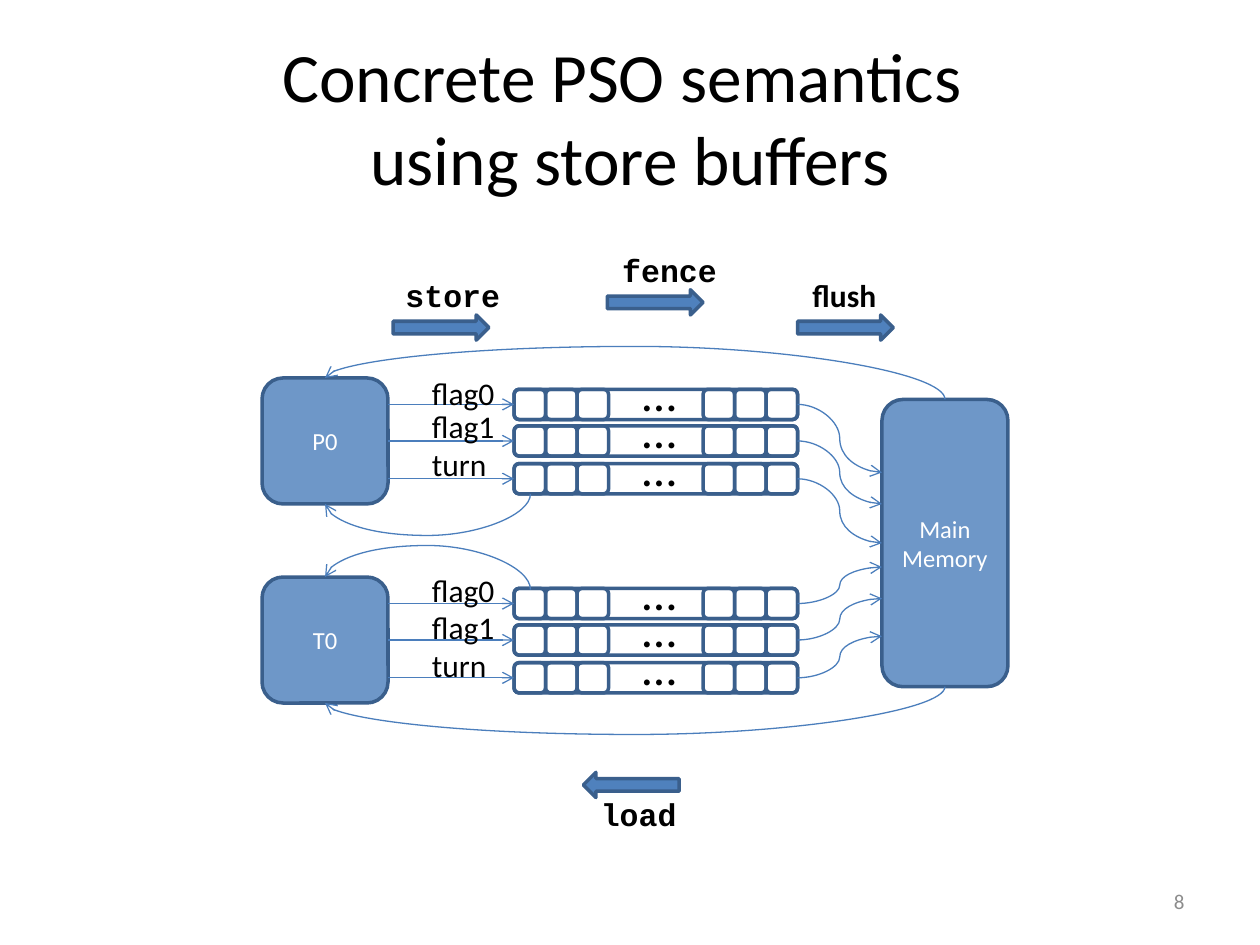
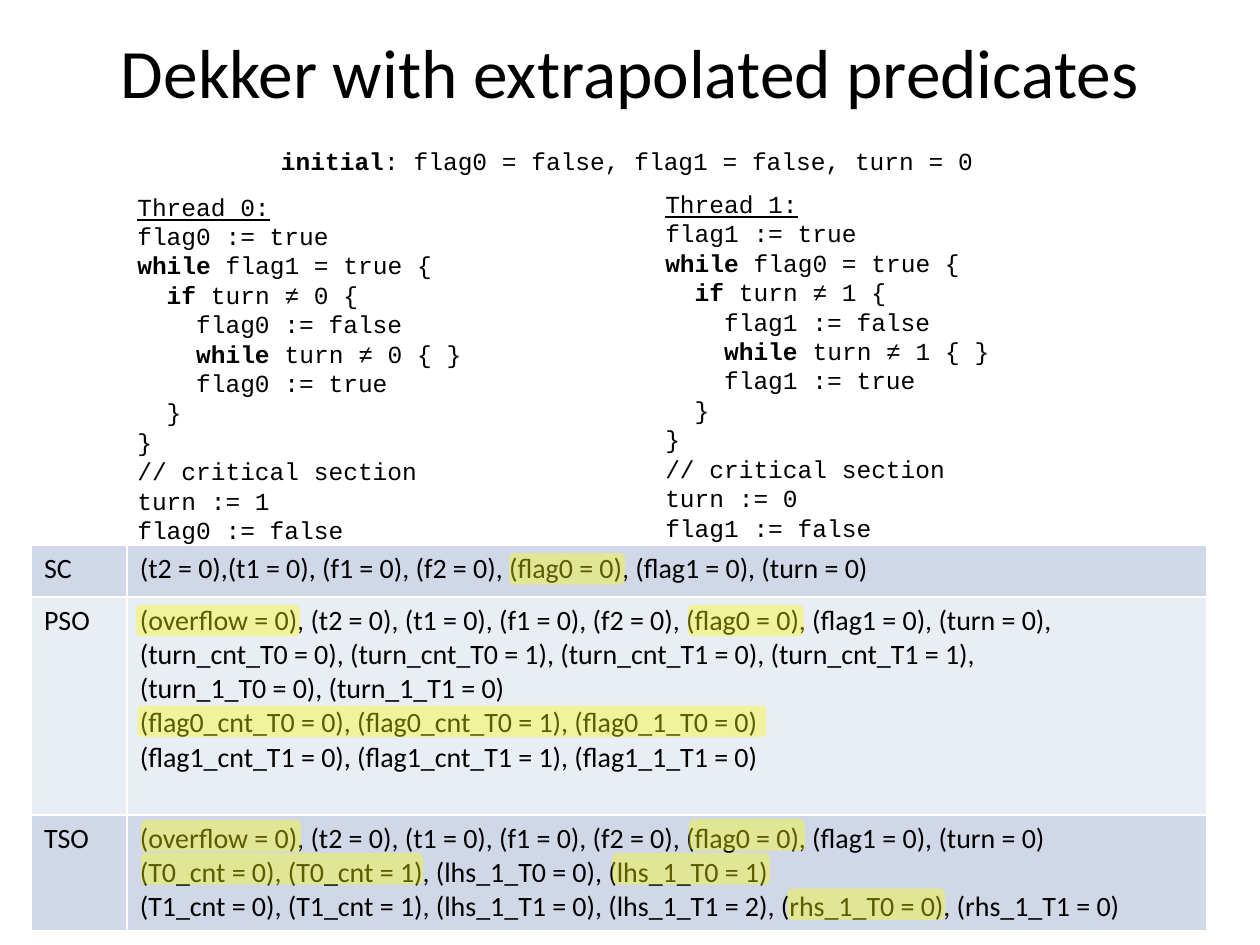
from dataclasses import dataclass

from lxml.etree import SubElement
from pptx import Presentation
from pptx.dml.color import RGBColor
from pptx.enum.shapes import MSO_CONNECTOR, MSO_SHAPE
from pptx.enum.text import MSO_ANCHOR, MSO_AUTO_SIZE, PP_ALIGN
from pptx.oxml.ns import qn
from pptx.util import Inches, Pt


@dataclass(frozen=True)
class Theme:
    """Colours, fonts and type sizes shared by the slides."""
    sans: str = "Calibri"
    mono: str = "Courier New"
    ink: str = "000000"
    paper: str = "FFFFFF"
    muted: str = "8C8C8C"
    node: str = "6E97C8"
    arrow: str = "4F81BD"
    outline: str = "3A5F8C"
    flow: str = "4B7EBC"
    bands: tuple = ("D0D8E8", "E9EDF4")
    marker: str = "FFFF00"
    title: float = 39.6
    dots: float = 28
    label: float = 18
    predicate: float = 16
    body: float = 14
    footer: float = 12


THEME = Theme()
BUFFER_LEFT, BUFFER_WIDTH, BUFFER_HEIGHT, CELL_WIDTH = 4.08, 2.25, 0.24, 0.25
MEMORY_LEFT, MEMORY_TOP, MEMORY_HEIGHT = 7, 3.17, 2.28
NODE_LEFT, NODE_SIZE = 2.08, 1
KEYWORDS = ("while", "if")


def color(value):
    """Turn a hex value into a colour."""
    return RGBColor.from_string(value)


def write_text(frame, paragraphs, size=THEME.body, font=THEME.sans, ink=THEME.ink,
               align=PP_ALIGN.LEFT, anchor=MSO_ANCHOR.TOP, bold=False, wrap=True,
               grow=False, inset=(0.1, 0.05)):
    """Fill a frame with paragraphs, each a string or a list of (text, style) runs."""
    frame.word_wrap = wrap
    frame.auto_size = MSO_AUTO_SIZE.SHAPE_TO_FIT_TEXT if grow else MSO_AUTO_SIZE.NONE
    frame.vertical_anchor = anchor
    frame.margin_left = frame.margin_right = Inches(inset[0])
    frame.margin_top = frame.margin_bottom = Inches(inset[1])
    for number, content in enumerate(paragraphs):
        paragraph = frame.paragraphs[0] if number == 0 else frame.add_paragraph()
        paragraph.alignment = align
        runs = [(content, {})] if isinstance(content, str) else content
        for text, style in runs:
            for row, piece in enumerate(text.split("\n")):
                if row:
                    paragraph.add_line_break()
                run = paragraph.add_run()
                run.text = piece
                run.font.size, run.font.name = Pt(size), font
                run.font.color.rgb = color(ink)
                run.font.bold = style.get("bold", bold)
                run.font.underline = style.get("underline", False)


def add_text(parent, box, paragraphs, **style):
    """Add a text box."""
    frame = parent.shapes.add_textbox(*map(Inches, box)).text_frame
    write_text(frame, paragraphs, **style)


def add_block(parent, box, kind=MSO_SHAPE.ROUNDED_RECTANGLE, fill=None,
              line=THEME.outline):
    """Add a flat preset shape."""
    block = parent.shapes.add_shape(kind, *map(Inches, box))
    block.shadow.inherit = False
    if fill:
        block.fill.solid()
        block.fill.fore_color.rgb = color(fill)
    else:
        block.fill.background()
    if line:
        block.line.color.rgb = color(line)
        block.line.width = Pt(2)
    else:
        block.line.fill.background()
    return block


def add_flow(slide, start, end):
    """Add a thin curved arrow between two points."""
    flow = slide.shapes.add_connector(MSO_CONNECTOR.CURVE, *map(Inches, start + end))
    flow.line.color.rgb = color(THEME.flow)
    flow.line.width = Pt(0.75)
    SubElement(flow.line._get_or_add_ln(), qn("a:tailEnd"), type="arrow")
    SubElement(flow._element.spPr, qn("a:effectLst"))
    return flow


def add_load_arc(slide, start, end, crest):
    """Add an arrow that runs left, leaving and arriving vertically via the crest."""
    (start_x, start_y), (end_x, end_y) = start, end
    rise, span = abs(end_y - start_y), start_x - end_x
    left = (start_x + end_x - rise) / 2
    top = (start_y + end_y - span) / 2
    near, far = (left, top), (left + rise, top + span)
    upward = end_y < start_y
    if upward:
        near, far = (left, top + span), (left + rise, top)
    properties = add_flow(slide, near, far)._element.spPr
    properties.find(qn("a:xfrm")).set("rot", str((270 if upward else 90) * 60000))
    bend = round((crest - start_y) / (end_y - start_y) * 100000)
    guides = properties.find(qn("a:prstGeom")).find(qn("a:avLst"))
    SubElement(guides, qn("a:gd"), name="adj1", fmla=f"val {bend}")


def add_title(slide, box, text):
    """Add the slide title."""
    add_text(slide, box, [text], size=THEME.title, align=PP_ALIGN.CENTER,
             anchor=MSO_ANCHOR.MIDDLE)


def add_node(slide, box, lines):
    """Add a filled process or memory node."""
    node = add_block(slide, box, fill=THEME.node)
    write_text(node.text_frame, lines, ink=THEME.paper, align=PP_ALIGN.CENTER,
               anchor=MSO_ANCHOR.MIDDLE)
    return node


def add_buffer(slide, left, top):
    """Add a store buffer: a frame, three cells at each end and dots between."""
    group = slide.shapes.add_group_shape()
    buffer = add_block(_Group(group), (left, top, BUFFER_WIDTH, BUFFER_HEIGHT))
    for slot in (0, 1, 2, 6, 7, 8):
        add_block(_Group(group),
                  (left + slot * CELL_WIDTH, top, CELL_WIDTH, BUFFER_HEIGHT))
    add_text(_Group(group), (left + 0.92, top - 0.26, 0.48, 0.42), ["…"],
             size=THEME.dots, wrap=False, grow=True)
    return buffer


@dataclass
class _Group:
    """Give a group the same way to add parts as a slide."""
    group: object

    @property
    def shapes(self):
        """Return the parts of the group."""
        return self.group.shapes


def add_process(slide, top, name, variables):
    """Add a process with one buffer per (variable, label offset, memory landing)."""
    right = NODE_LEFT + NODE_SIZE
    process = add_node(slide, (NODE_LEFT, top, NODE_SIZE, NODE_SIZE), [name])
    for offset, (variable, label_offset, landing) in zip((0.09, 0.38, 0.68), variables):
        buffer = add_buffer(slide, BUFFER_LEFT, top + offset)
        middle = top + offset + BUFFER_HEIGHT / 2
        store = add_flow(slide, (right, middle), (BUFFER_LEFT, middle))
        if offset == 0.38:
            store.begin_connect(process, 3)
        store.end_connect(buffer, 1)
        add_flow(slide, (BUFFER_LEFT + BUFFER_WIDTH, middle), (MEMORY_LEFT, landing))
        width = 0.64 if variable == "turn" else 0.76
        add_text(slide, (right + 0.25, top + label_offset, width, 0.4), [variable],
                 size=THEME.label, wrap=False, grow=True)


def add_operation(slide, left, top, name, caption, font=THEME.mono,
                  kind=MSO_SHAPE.RIGHT_ARROW):
    """Add a block arrow with a caption at (dx, dy, width) from its corner."""
    dx, dy, width = caption
    add_text(slide, (left + dx, top + dy, width, 0.4), [name], size=THEME.label,
             font=font, bold=True, wrap=False, grow=True)
    add_block(slide, (left, top, 0.76, 0.2), kind, fill=THEME.arrow)


def build_semantics_slide(slide):
    """Show how stores, flushes and loads pass between processes and memory."""
    add_title(slide, (0.5, 0.3, 9, 1.25), "Concrete PSO semantics \nusing store buffers")
    add_text(slide, (7.17, 6.95, 2.33, 0.4), ["8"], size=THEME.footer, ink=THEME.muted,
             align=PP_ALIGN.RIGHT, anchor=MSO_ANCHOR.MIDDLE)
    add_node(slide, (MEMORY_LEFT, MEMORY_TOP, 1, MEMORY_HEIGHT), ["Main", "Memory"])
    add_process(slide, 3, "P0", (("flag0", -0.08, 3.75), ("flag1", 0.18, 4),
                                 ("turn", 0.48, 4.31)))
    add_process(slide, 4.58, "T0", (("flag0", -0.1, 4.5), ("flag1", 0.2, 4.75),
                                    ("turn", 0.5, 5.05)))
    memory_x, process_x, cell_x = MEMORY_LEFT + 0.5, NODE_LEFT + 0.5, 4.21
    for start, end_y, crest in (((memory_x, MEMORY_TOP), 3, 2.75),
                                ((memory_x, MEMORY_TOP + MEMORY_HEIGHT), 5.58, 5.83),
                                ((cell_x, 3.92), 4, 4.25),
                                ((cell_x, 4.68), 4.58, 4.33)):
        add_load_arc(slide, start, (process_x, end_y), crest)
    add_operation(slide, 3.12, 2.5, "store", (0, -0.36, 0.96))
    add_operation(slide, 6.33, 2.5, "flush", (0.02, -0.36, 0.73), font=THEME.sans)
    add_operation(slide, 4.63, 6.13, "load", (0.04, 0.13, 0.81),
                  kind=MSO_SHAPE.LEFT_ARROW)
    add_operation(slide, 4.82, 2.3, "fence", (0.02, -0.36, 0.96))


def code_runs(line):
    """Split a code line so that its leading keyword is bold."""
    for keyword in KEYWORDS:
        if line.lstrip().startswith(keyword):
            end = line.index(keyword) + len(keyword)
            return [(line[:end], {"bold": True}), (line[end:], {})]
    return line


def add_code(slide, box, paragraphs):
    """Add a block of program text."""
    add_text(slide, box, paragraphs, font=THEME.mono, wrap=False, inset=(0.09, 0.04))


def add_thread(slide, box, own, other):
    """Add the program of one thread of the mutual exclusion."""
    program = (f"flag{own} := true", f"while flag{other} = true {{",
               f"  if turn ≠ {own} {{", f"    flag{own} := false",
               f"    while turn ≠ {own} {{ }}", f"    flag{own} := true", "  }", "}",
               "// critical section", f"turn := {other}", f"flag{own} := false")
    heading = [(f"Thread {own}:", {"underline": True})]
    add_code(slide, box, [heading] + [code_runs(line) for line in program])


def add_predicates(slide, box, models):
    """Add the table of predicates for (model, row height, lines)."""
    grid = slide.shapes.add_table(len(models), 2, *map(Inches, box)).table
    grid.first_row = grid.horz_banding = False
    name_width = 0.76
    grid.columns[0].width = Inches(name_width)
    grid.columns[1].width = Inches(box[2] - name_width)
    for row, (model, height, lines) in enumerate(models):
        grid.rows[row].height = Inches(height)
        for column, content in enumerate(([model], lines)):
            cell = grid.cell(row, column)
            write_text(cell.text_frame, content, size=THEME.predicate)
            cell.margin_left = cell.margin_right = Inches(0.1)
            cell.margin_top = cell.margin_bottom = Inches(0.05)
            properties = cell._tc.get_or_add_tcPr()
            for side in ("lnL", "lnR", "lnT", "lnB"):
                border = SubElement(properties, qn(f"a:{side}"), w=str(Pt(1)))
                paint = SubElement(border, qn("a:solidFill"))
                SubElement(paint, qn("a:srgbClr"), val=THEME.paper)
            cell.fill.solid()
            cell.fill.fore_color.rgb = color(THEME.bands[row % 2])


def add_highlight(slide, left, top, width):
    """Lay a translucent marker stroke over a predicate."""
    stroke = add_block(slide, (left, top, width, 0.25), fill=THEME.marker, line=None)
    tint = stroke._element.spPr.find(qn("a:solidFill")).find(qn("a:srgbClr"))
    SubElement(tint, qn("a:alpha"), val="36000")


def build_dekker_slide(slide):
    """Show the algorithm and the predicates of each memory model."""
    add_title(slide, (0.5, 0.17, 9, 0.78), "Dekker with extrapolated predicates")
    add_thread(slide, (1, 1.48, 3.66, 2.85), 0, 1)
    add_thread(slide, (5.19, 1.46, 3.66, 2.87), 1, 0)
    add_code(slide, (2.14, 1.12, 5.73, 0.38), [[
        ("initial", {"bold": True}), (": flag0 = false, flag1 = false, turn = 0", {})]])
    shared = ("(overflow = 0), (t2 = 0), (t1 = 0), (f1 = 0), (f2 = 0), "
              "(flag0 = 0), (flag1 = 0), (turn = 0)")
    add_predicates(slide, (0.25, 4.33, 9.33, 3.06), (
        ("SC", 0.41, ["(t2 = 0),(t1 = 0), (f1 = 0), (f2 = 0), "
                      "(flag0 = 0), (flag1 = 0), (turn = 0)"]),
        ("PSO", 1.73, [
            shared + ",",
            "(turn_cnt_T0 = 0), (turn_cnt_T0 = 1), (turn_cnt_T1 = 0), (turn_cnt_T1 = 1),",
            "(turn_1_T0 = 0), (turn_1_T1 = 0)",
            "(flag0_cnt_T0 = 0), (flag0_cnt_T0 = 1), (flag0_1_T0 = 0)",
            "(flag1_cnt_T1 = 0), (flag1_cnt_T1 = 1), (flag1_1_T1 = 0)"]),
        ("TSO", 0.92, [
            shared,
            "(T0_cnt = 0), (T0_cnt = 1), (lhs_1_T0 = 0), (lhs_1_T0 = 1)",
            "(T1_cnt = 0), (T1_cnt = 1), (lhs_1_T1 = 0), (lhs_1_T1 = 2), "
            "(rhs_1_T0 = 0), (rhs_1_T1 = 0)"])))
    for stroke in ((4.04, 4.39, 0.92), (1.09, 5.6, 4.99), (5.46, 4.8, 0.92),
                   (5.47, 6.5, 0.92), (1.12, 6.77, 2.24), (4.86, 6.77, 1.25),
                   (6.25, 7.05, 1.25), (1.08, 4.8, 1.3), (1.12, 6.51, 1.27)):
        add_highlight(slide, *stroke)


def main():
    """Build and save the presentation."""
    deck = Presentation()
    deck.slide_width, deck.slide_height = Inches(10), Inches(7.5)
    for build in (build_semantics_slide, build_dekker_slide):
        build(deck.slides.add_slide(deck.slide_layouts[6]))
    deck.save("out.pptx")


if __name__ == "__main__":
    main()
